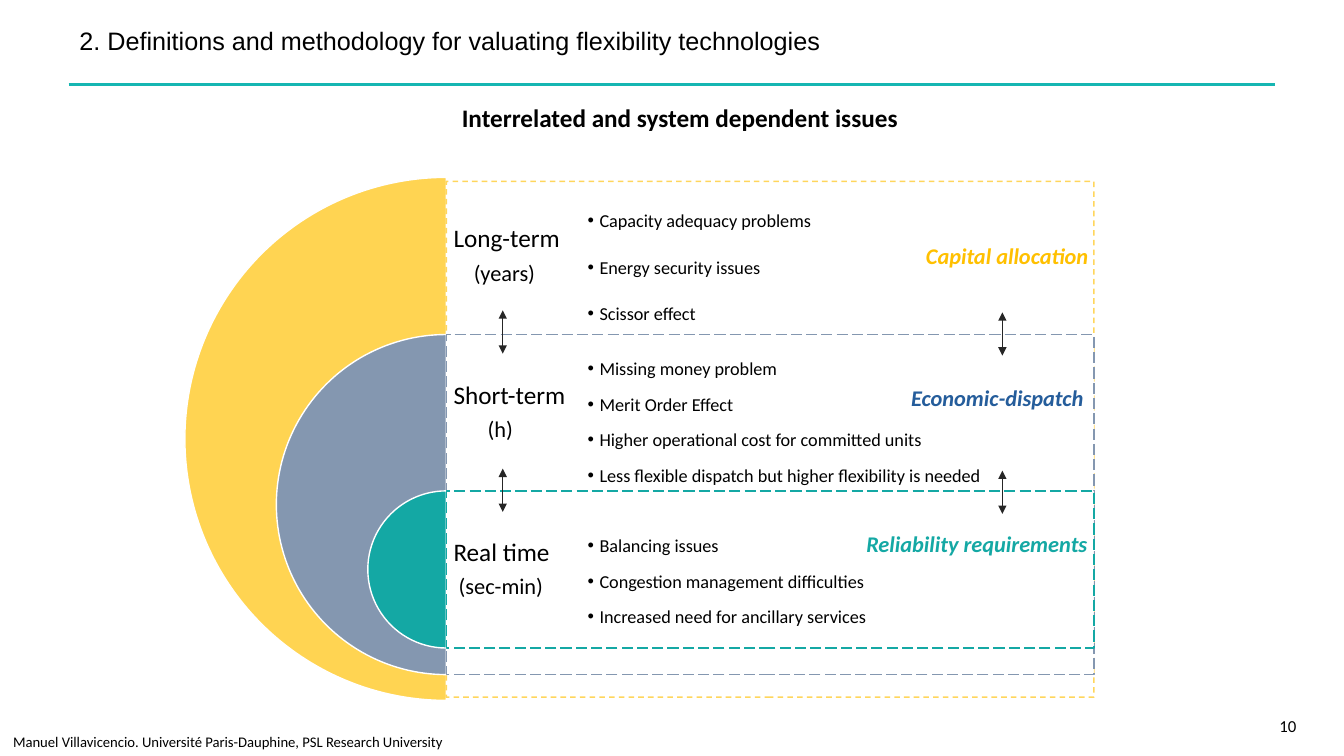
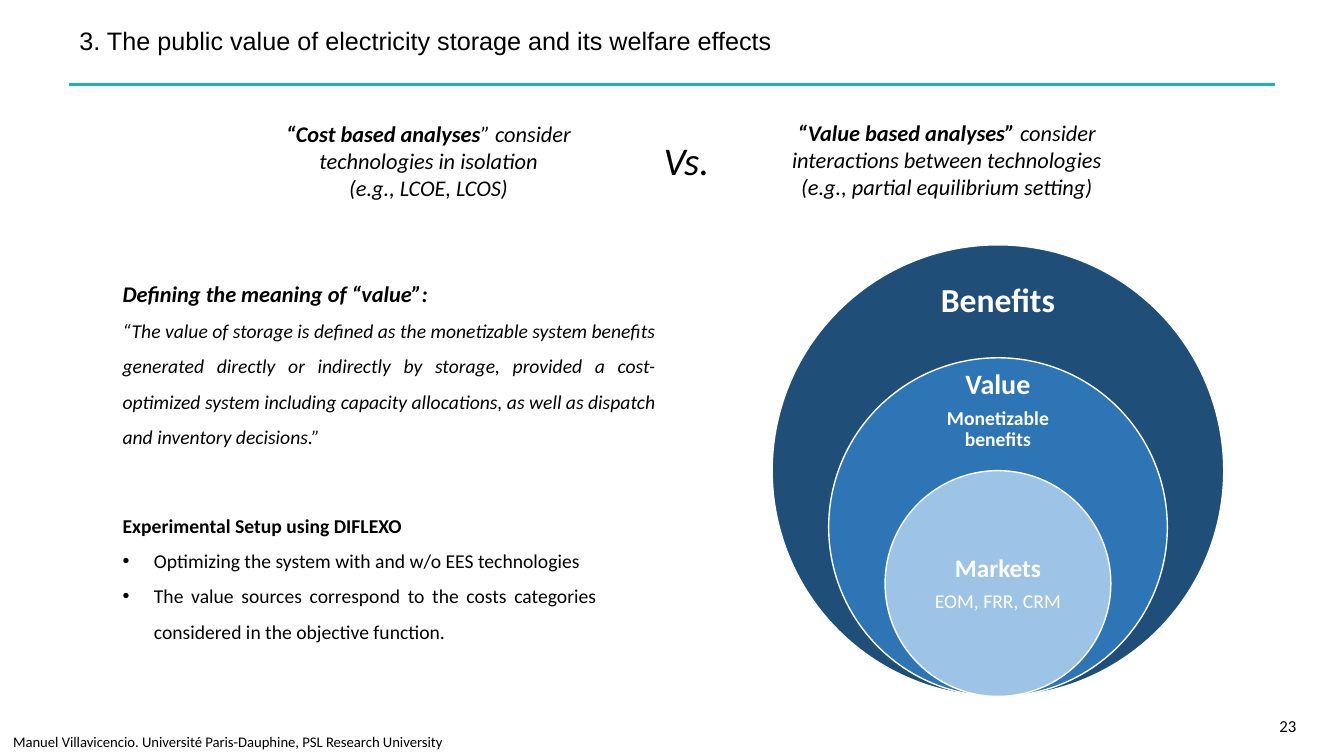
from lxml import etree
from pptx import Presentation
from pptx.dml.color import RGBColor
from pptx.enum.dml import MSO_LINE
from pptx.enum.shapes import MSO_CONNECTOR, MSO_SHAPE
from pptx.enum.text import MSO_ANCHOR, MSO_AUTO_SIZE, PP_ALIGN
from pptx.oxml.ns import qn
from pptx.util import Cm, Pt

LEFT, RIGHT = PP_ALIGN.LEFT, PP_ALIGN.RIGHT
CENTER, FULL = PP_ALIGN.CENTER, PP_ALIGN.JUSTIFY
TOP, MID, LOW = MSO_ANCHOR.TOP, MSO_ANCHOR.MIDDLE, MSO_ANCHOR.BOTTOM
DASH, LONG = MSO_LINE.DASH, MSO_LINE.LONG_DASH
PIE, RECT, OVAL = MSO_SHAPE.PIE, MSO_SHAPE.RECTANGLE, MSO_SHAPE.OVAL

BLACK = RGBColor(0x00, 0x00, 0x00)
WHITE = RGBColor(0xFF, 0xFF, 0xFF)
DARK = RGBColor(0x26, 0x26, 0x26)
AQUA = RGBColor(0x16, 0xB6, 0xB2)
GOLD = RGBColor(0xFF, 0xC0, 0x00)
SLATE = RGBColor(0x84, 0x97, 0xB0)
TEAL = RGBColor(0x14, 0xA8, 0xA4)
BLUE = RGBColor(0x25, 0x5D, 0x9B)
NAVY = RGBColor(0x1F, 0x4E, 0x79)
AZURE = RGBColor(0x2E, 0x75, 0xB6)
SKY = RGBColor(0x9D, 0xC3, 0xE6)


def write(shape, paras, color=BLACK, align=LEFT, anchor=TOP, pitch=None,
          after=0, pad=(0.25, 0.13, 0.25, 0.13), slant=False, face="Calibri"):
    """Fill a shape with paragraphs, each a list of (text, size, bold)."""
    frame = shape.text_frame
    frame.word_wrap = True
    frame.auto_size = MSO_AUTO_SIZE.NONE
    frame.vertical_anchor = anchor
    frame.margin_left, frame.margin_top, frame.margin_right, frame.margin_bottom = map(Cm, pad)
    for i, runs in enumerate(paras):
        par = frame.add_paragraph() if i else frame.paragraphs[0]
        par.alignment = align
        par.line_spacing = pitch
        par.space_after = Pt(after)
        for text, size, bold in runs:
            run = par.add_run()
            run.text = text
            font = run.font
            font.name, font.size, font.bold, font.italic = face, Pt(size), bold, slant
            font.color.rgb = color
    return frame.paragraphs


def indent(par, left, mark=None):
    """Indent a paragraph, with a hanging bullet if a mark is given."""
    props = par._p.get_or_add_pPr()
    props.set("marL", str(Cm(left)))
    if mark:
        props.set("indent", str(-Cm(left)))
        etree.SubElement(props, qn("a:buFont")).set("typeface", "Arial")
        etree.SubElement(props, qn("a:buChar")).set("char", mark)


deck = Presentation()
deck.slide_width, deck.slide_height = Cm(33.87), Cm(19.05)

# Shared frame: title, footer, page number, rule
TITLES = [
    ("2. Definitions and methodology for valuating flexibility technologies", "10"),
    ("3. The public value of electricity storage and its welfare effects", "23"),
]
FOOT = "Manuel Villavicencio. Université Paris-Dauphine, PSL Research University"
slides, lines = [], []
for title, page in TITLES:
    sld = deck.slides.add_slide(deck.slide_layouts[5])
    head = sld.shapes.title
    head.left, head.top, head.width, head.height = Cm(1.75), Cm(0), Cm(30.4), Cm(2.13)
    write(head, [[(title, 18, False)]], anchor=MID, pitch=0.9, face="Arial")
    foot = sld.shapes.add_textbox(Cm(0), Cm(18.34), Cm(20.47), Cm(0.74))
    write(foot, [[(FOOT, 10.5, False)]], pad=(0.33, 0.13, 0.25, 0.13))
    num = sld.shapes.add_textbox(Cm(30.76), Cm(17.65), Cm(2.16), Cm(1.02))
    write(num, [[(page, 12, False)]], align=RIGHT, anchor=LOW)
    lines.append((sld, 1.73, 2.13, 32.13, 2.13, AQUA, 2, False))
    slides.append(sld)
first, second = slides

# Slide 1: heading
box = first.shapes.add_textbox(Cm(5.54), Cm(2.44), Cm(23.19), Cm(1.2))
write(box, [[("Interrelated and system dependent issues", 18, True)]], align=CENTER)

# Slide 1: nested half rings with their time frames
# top, size, fill, opacity, panel top, panel height, dash, edge opacity, text pad
# below, term, span, span indent, bullet top, pitch, anchor, bullets,
# label, label colour, label top, label right
RINGS = [
    (4.47, 13.18, GOLD, 68, 4.57, 13, DASH, 63, 9.42,
     "Long-term", "(years)", 0.51, 4.47, 2, MID,
     ["Capacity adequacy problems", "Energy security issues", "Scissor effect"],
     "Capital allocation", GOLD, 5.97, 27.68),
    (8.43, 8.57, SLATE, 100, 8.43, 8.57, LONG, 100, 4.8,
     "Short-term", "(h)", 0.86, 8.51, 1.5, MID,
     ["Missing money problem", "Merit Order Effect",
      "Higher operational cost for committed units",
      "Less flexible dispatch but higher flexibility is needed"],
     "Economic-dispatch", BLUE, 9.55, 27.56),
    (12.37, 3.96, TEAL, 100, 12.37, 3.96, LONG, 100, 0.18,
     "Real time", "(sec-min)", 0.13, 12.5, 1.5, TOP,
     ["Balancing issues", "Congestion management difficulties",
      "Increased need for ancillary services"],
     "Reliability requirements", TEAL, 13.23, 27.66),
]
AXIS = 11.25
for (top, size, color, veil, ptop, high, dash, edge, below, term, span, shift,
     btop, pitch, anchor, items, label, tint, ltop, right) in RINGS:
    pie = first.shapes.add_shape(PIE, Cm(AXIS - size / 2), Cm(top), Cm(size), Cm(size))
    pie.adjustments[0], pie.adjustments[1] = 54, 162
    panel = first.shapes.add_shape(RECT, Cm(AXIS), Cm(ptop), Cm(16.32), Cm(high))
    for shape, fill, rim, alphas in ((pie, color, WHITE, (veil, 100)),
                                     (panel, WHITE, color, (90, edge))):
        shape.shadow.inherit = False
        shape.fill.solid()
        shape.fill.fore_color.rgb = fill
        shape.line.color.rgb = rim
        shape.line.width = Pt(1)
        tones = list(shape._element.spPr.iter(qn("a:srgbClr")))
        for tone, alpha in zip(tones, alphas):
            etree.SubElement(tone, qn("a:alpha")).set("val", str(alpha * 1000))
    panel.line.dash_style = dash
    pars = write(panel, [[(term, 18, False)], [(span, 16, False)]], anchor=MID,
                 pitch=0.9, after=6, pad=(0.18, 0.18, 8.36, below))
    indent(pars[1], shift)

    box = first.shapes.add_textbox(Cm(14.12), Cm(btop), Cm(13.5), Cm(3.96))
    pars = write(box, [[(item, 13, False)] for item in items], anchor=anchor,
                 pitch=pitch, after=2, pad=(0.69,) * 4)
    for par in pars:
        indent(par, 0.3, "•")
    box = first.shapes.add_textbox(Cm(right - 6.5), Cm(ltop), Cm(6.5), Cm(0.94))
    write(box, [[(label, 16, True)]], tint, RIGHT, slant=True)

# Slide 1: two-way arrows between the bands
for x, y in ((12.67, 7.82), (25.26, 7.87)):
    for step in (0, 3.99):
        lines.append((first, x, y + step, x, y + step + 1.09, DARK, 1, True))

# Slide 2: nested circles on one base point
MIDDLE, BASE, WIDE = 25.15, 17.55, 11.38
CIRCLES = [
    (1, NAVY, 6.76, 1.7, 0.48, [[("Benefits", 24, True)]]),
    (0.75, AZURE, 9.55, 1.6, 0.41,
     [[("Value", 20, True)], [("Monetizable benefits", 14, True)]]),
    (0.5, SKY, 13.31, 2.84, 0.36,
     [[("Markets", 18, True)], [("EOM, FRR, CRM", 14, False)]]),
]
for ratio, color, top, high, pad, paras in CIRCLES:
    size = WIDE * ratio
    disc = second.shapes.add_shape(OVAL, Cm(MIDDLE - size / 2), Cm(BASE - size),
                                   Cm(size), Cm(size))
    disc.shadow.inherit = False
    disc.fill.solid()
    disc.fill.fore_color.rgb = color
    disc.line.color.rgb = WHITE
    disc.line.width = Pt(1)
    box = second.shapes.add_textbox(Cm(MIDDLE - 2.02), Cm(top), Cm(4.04), Cm(high))
    write(box, paras, WHITE, CENTER, MID, 0.9, 6, (pad,) * 4)

# Slide 2: the two approaches
SIDES = [
    (6.3, 2.9, 9, 2.31, [
        [("“Cost based analyses", 16, True),
         ("” consider technologies in isolation", 16, False)],
        [("(e.g., LCOE, LCOS)", 16, False)]]),
    (15.3, 3.3, 4, 1.45, [[("Vs.", 28, False)]]),
    (18.92, 2.87, 9.88, 2.31, [
        [("“Value based analyses” ", 16, True),
         ("consider interactions between technologies", 16, False)],
        [("(e.g., partial equilibrium setting)", 16, False)]]),
]
for x, y, wide, high, paras in SIDES:
    box = second.shapes.add_textbox(Cm(x), Cm(y), Cm(wide), Cm(high))
    write(box, paras, align=CENTER, slant=True)

# Slide 2: definition and setup
QUOTE = ("“The value of storage is defined as the monetizable system benefits "
         "generated directly or indirectly by storage, provided a cost-optimized "
         "system including capacity allocations, as well as dispatch and "
         "inventory decisions.”")
box = second.shapes.add_textbox(Cm(2.84), Cm(6.6), Cm(13.94), Cm(5.2))
write(box, [[("Defining the meaning of “value”:", 16, True)], [(QUOTE, 14, False)]],
      align=FULL, pitch=1.5, slant=True)
box = second.shapes.add_textbox(Cm(2.84), Cm(12.52), Cm(12.45), Cm(3.84))
pars = write(box, [
    [("Experimental Setup using DIFLEXO", 14, True)],
    [("Optimizing the system with and w/o EES technologies", 14, False)],
    [("The value sources correspond to the costs categories considered in the "
      "objective function.", 14, False)],
], align=FULL, pitch=1.5)
for par in pars[1:]:
    indent(par, 0.79, "•")

# Rules and arrows
for sld, x1, y1, x2, y2, color, width, ends in lines:
    link = sld.shapes.add_connector(MSO_CONNECTOR.STRAIGHT, Cm(x1), Cm(y1), Cm(x2), Cm(y2))
    link.line.color.rgb = color
    link.line.width = Pt(width)
    if ends:
        for tag in ("a:headEnd", "a:tailEnd"):
            etree.SubElement(link.line._get_or_add_ln(), qn(tag)).set("type", "triangle")
    etree.SubElement(link._element.spPr, qn("a:effectLst"))

deck.save("out.pptx")
